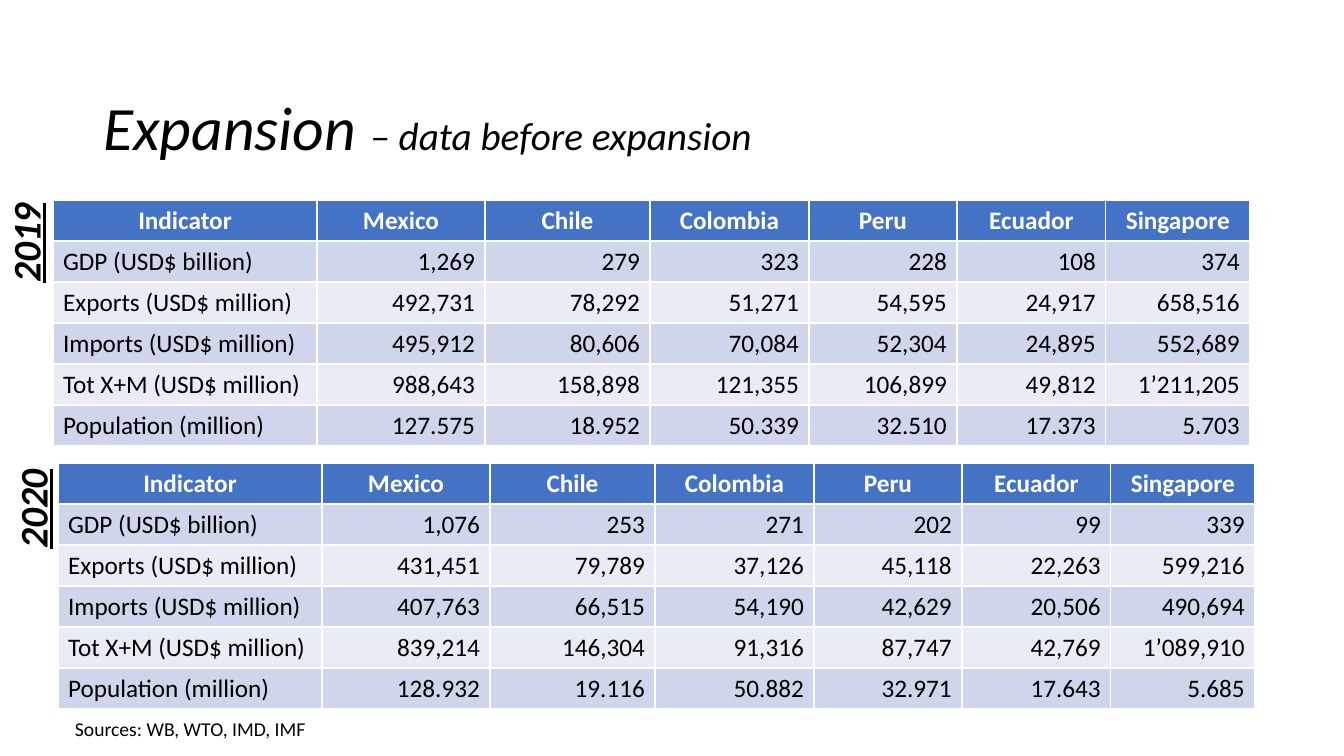
from pptx import Presentation
from pptx.dml.color import RGBColor
from pptx.enum.text import MSO_ANCHOR, MSO_AUTO_SIZE, PP_ALIGN
from pptx.util import Emu, Pt


def px(n):
    return Emu(round(n * 914400 / 100.8))


def style(font, size, color, bold=False, italic=False):
    font.name = "Calibri"
    font.size = Pt(size)
    font.bold = bold
    font.italic = italic
    font.color.rgb = RGBColor.from_string(color)


prs = Presentation()
prs.slide_width, prs.slide_height = px(1344), px(756)
s = prs.slides.add_slide(prs.slide_layouts[5])

title = s.shapes.title
title.left, title.top, title.width, title.height = px(93), px(74), px(1159), px(113)
tf = title.text_frame
tf.auto_size = MSO_AUTO_SIZE.NONE
tf.vertical_anchor = MSO_ANCHOR.MIDDLE
p = tf.paragraphs[0]
p.alignment = PP_ALIGN.LEFT
p.line_spacing = 0.9
for text, size in [("Expansion ", 44), ("– data before expansion", 28)]:
    r = p.add_run()
    r.text = text
    style(r.font, size, "000000", italic=True)

header = ["Indicator", "Mexico", "Chile", "Colombia", "Peru", "Ecuador", "Singapore"]
indicators = ["GDP (USD$ billion)", "Exports (USD$ million)", "Imports (USD$ million)",
              "Tot X+M (USD$ million)", "Population (million)"]
col_widths = [264, 168, 165, 159, 148, 149, 144]
row_height = 41

values_2019 = [
    ["1,269", "279", "323", "228", "108", "374"],
    ["492,731", "78,292", "51,271", "54,595", "24,917", "658,516"],
    ["495,912", "80,606", "70,084", "52,304", "24,895", "552,689"],
    ["988,643", "158,898", "121,355", "106,899", "49,812", "1’211,205"],
    ["127.575", "18.952", "50.339", "32.510", "17.373", "5.703"],
]
values_2020 = [
    ["1,076", "253", "271", "202", "99", "339"],
    ["431,451", "79,789", "37,126", "45,118", "22,263", "599,216"],
    ["407,763", "66,515", "54,190", "42,629", "20,506", "490,694"],
    ["839,214", "146,304", "91,316", "87,747", "42,769", "1’089,910"],
    ["128.932", "19.116", "50.882", "32.971", "17.643", "5.685"],
]

for year, values, left, top, year_left, year_top in [
    ("2019", values_2019, 53, 200, -61, 178),
    ("2020", values_2020, 58, 463, -54, 444),
]:
    rows = [header] + [[name] + nums for name, nums in zip(indicators, values)]
    table = s.shapes.add_table(len(rows), len(header), px(left), px(top),
                               px(sum(col_widths)), px(row_height * len(rows))).table
    for col, width in zip(table.columns, col_widths):
        col.width = px(width)
    for i, row in enumerate(rows):
        table.rows[i].height = px(row_height)
        fill = "4472C4" if i == 0 else ("CFD5EA" if i % 2 else "E9EBF5")
        for j, text in enumerate(row):
            cell = table.cell(i, j)
            cell.fill.solid()
            cell.fill.fore_color.rgb = RGBColor.from_string(fill)
            cell.text = text
            p = cell.text_frame.paragraphs[0]
            if i == 0:
                p.alignment = PP_ALIGN.CENTER
            else:
                p.alignment = PP_ALIGN.RIGHT if j else PP_ALIGN.LEFT
            style(p.runs[0].font, 18, "000000" if i else "FFFFFF", bold=i == 0)

    sp = s.shapes.add_textbox(px(year_left), px(year_top), px(172), px(57))
    sp.rotation = 270
    tf = sp.text_frame
    tf.word_wrap = True
    tf.text = year
    font = tf.paragraphs[0].runs[0].font
    style(font, 28, "000000", bold=True, italic=True)
    font.underline = True

sp = s.shapes.add_textbox(px(65), px(712), px(330), px(34))
tf = sp.text_frame
tf.word_wrap = True
tf.text = "Sources: WB, WTO, IMD, IMF"
style(tf.paragraphs[0].runs[0].font, 14, "000000")

prs.save("out.pptx")
